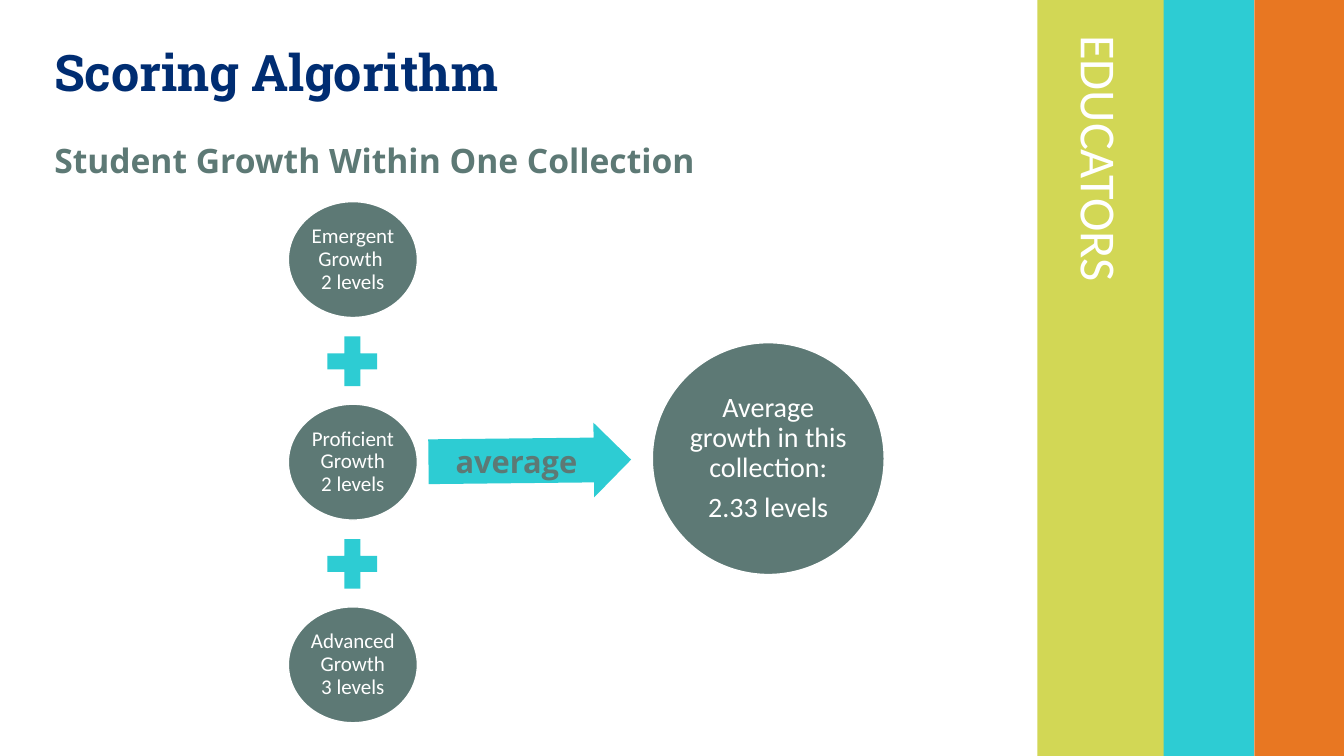
from dataclasses import dataclass

from pptx import Presentation
from pptx.dml.color import RGBColor
from pptx.enum.shapes import MSO_SHAPE
from pptx.enum.text import MSO_ANCHOR, PP_ALIGN
from pptx.shapes.autoshape import Shape
from pptx.slide import Slide
from pptx.text.text import TextFrame
from pptx.util import Inches, Pt

RECTANGLE = MSO_SHAPE.RECTANGLE
OVAL = MSO_SHAPE.OVAL
PLUS = MSO_SHAPE.MATH_PLUS
RIGHT_ARROW = MSO_SHAPE.RIGHT_ARROW
TOP = MSO_ANCHOR.TOP
MIDDLE = MSO_ANCHOR.MIDDLE
LEFT = PP_ALIGN.LEFT
CENTER = PP_ALIGN.CENTER


@dataclass(frozen=True)
class Theme:
    white: str = "FFFFFF"
    navy: str = "002D72"
    slate: str = "5D7975"
    lime: str = "D2D755"
    teal: str = "2DCCD3"
    orange: str = "E87722"
    body_font: str = "Calibri"
    heading_font: str = "Open Sans"
    title_font: str = "Roboto Slab"
    title_size: float = 36
    subtitle_size: float = 24
    average_size: float = 22
    result_size: float = 20
    level_size: float = 15


@dataclass(frozen=True)
class Box:
    left: float
    top: float
    width: float
    height: float


@dataclass(frozen=True)
class Band:
    left: float
    width: float
    color: str


THEME = Theme()
SLIDE_WIDTH, SLIDE_HEIGHT = 13.33, 7.5
BANDS = [
    Band(10.29, 1.26, THEME.lime),
    Band(11.54, 0.9, THEME.teal),
    Band(12.44, 0.89, THEME.orange),
]
GROWTH_LEVELS = [
    "Emergent Growth \n2 levels",
    "Proficient Growth\n2 levels",
    "Advanced Growth\n3 levels",
]
FIRST_LEVEL = Box(2.86, 2, 1.28, 1.15)
FIRST_PLUS = Box(3.16, 3.25, 0.67, 0.67)
LEVEL_STEP = 2.01


def write(frame: TextFrame, paragraphs: list[str], *, size: float, color: str,
          font: str = THEME.body_font, bold: bool = False,
          align: PP_ALIGN = LEFT, anchor: MSO_ANCHOR = TOP,
          line_spacing: float = 1.0, space_after: float = 0,
          inset: float | None = None) -> None:
    frame.word_wrap = True
    frame.vertical_anchor = anchor
    if inset is not None:
        frame.margin_left = frame.margin_right = Inches(inset)
        frame.margin_top = frame.margin_bottom = Inches(inset)
    for index, wording in enumerate(paragraphs):
        paragraph = frame.add_paragraph() if index else frame.paragraphs[0]
        paragraph.text = wording
        paragraph.alignment = align
        paragraph.line_spacing = line_spacing
        paragraph.space_after = Pt(space_after)
        for run in paragraph.runs:
            run.font.name = font
            run.font.size = Pt(size)
            run.font.bold = bold
            run.font.color.rgb = RGBColor.from_string(color)


def add_label(slide: Slide, box: Box) -> Shape:
    return slide.shapes.add_textbox(Inches(box.left), Inches(box.top),
                                    Inches(box.width), Inches(box.height))


def add_figure(slide: Slide, kind: MSO_SHAPE, box: Box, color: str) -> Shape:
    figure = slide.shapes.add_shape(kind, Inches(box.left), Inches(box.top),
                                    Inches(box.width), Inches(box.height))
    figure.shadow.inherit = False
    figure.fill.solid()
    figure.fill.fore_color.rgb = RGBColor.from_string(color)
    figure.line.fill.background()
    return figure


def add_circle(slide: Slide, box: Box, paragraphs: list[str],
               size: float, inset: float) -> None:
    circle = add_figure(slide, OVAL, box, THEME.slate)
    circle.line.color.rgb = RGBColor.from_string(THEME.white)
    circle.line.width = Pt(1)
    write(circle.text_frame, paragraphs, size=size, color=THEME.white,
          align=CENTER, anchor=MIDDLE, line_spacing=0.9,
          space_after=0.35 * size, inset=inset)


def lowered(box: Box, steps: int) -> Box:
    return Box(box.left, box.top + steps * LEVEL_STEP, box.width, box.height)


def add_sidebar(slide: Slide) -> None:
    for band in BANDS:
        add_figure(slide, RECTANGLE, Box(band.left, 0, band.width, SLIDE_HEIGHT), band.color)
    audience = add_label(slide, Box(8.62, 2.19, 4.59, 0.71))
    audience.rotation = 90
    write(audience.text_frame, ["EDUCATORS"], size=THEME.title_size, color=THEME.white)


def add_headings(slide: Slide) -> None:
    title = add_label(slide, Box(0.44, 0.25, 8.95, 1))
    write(title.text_frame, ["Scoring Algorithm"], size=THEME.title_size,
          color=THEME.navy, font=THEME.title_font, bold=True,
          anchor=MIDDLE, line_spacing=0.9)
    subtitle = add_label(slide, Box(0.44, 1.34, 6.74, 0.5))
    write(subtitle.text_frame, ["Student Growth Within One Collection"],
          size=THEME.subtitle_size, color=THEME.slate,
          font=THEME.heading_font, bold=True)


def add_growth_equation(slide: Slide) -> None:
    for step, growth in enumerate(GROWTH_LEVELS):
        if step:
            add_figure(slide, PLUS, lowered(FIRST_PLUS, step - 1), THEME.teal)
        add_circle(slide, lowered(FIRST_LEVEL, step), [growth], THEME.level_size, 0.02)

    arrow = add_figure(slide, RIGHT_ARROW, Box(4.25, 4.2, 2.01, 0.74), THEME.teal)
    arrow.rotation = 359.4
    arrow.adjustments[0] = 0.6
    arrow.adjustments[1] = 0.5
    add_circle(slide, Box(6.47, 3.4, 2.3, 2.3),
               ["Average growth in this collection:", "2.33 levels"],
               THEME.result_size, 0.03)
    average = add_label(slide, Box(4.42, 4.34, 1.59, 0.47))
    write(average.text_frame, ["average"], size=THEME.average_size,
          color=THEME.slate, font=THEME.heading_font, bold=True)


def main() -> None:
    presentation = Presentation()
    presentation.slide_width = Inches(SLIDE_WIDTH)
    presentation.slide_height = Inches(SLIDE_HEIGHT)
    slide = presentation.slides.add_slide(presentation.slide_layouts[6])
    add_sidebar(slide)
    add_headings(slide)
    add_growth_equation(slide)
    presentation.save("out.pptx")


if __name__ == "__main__":
    main()
